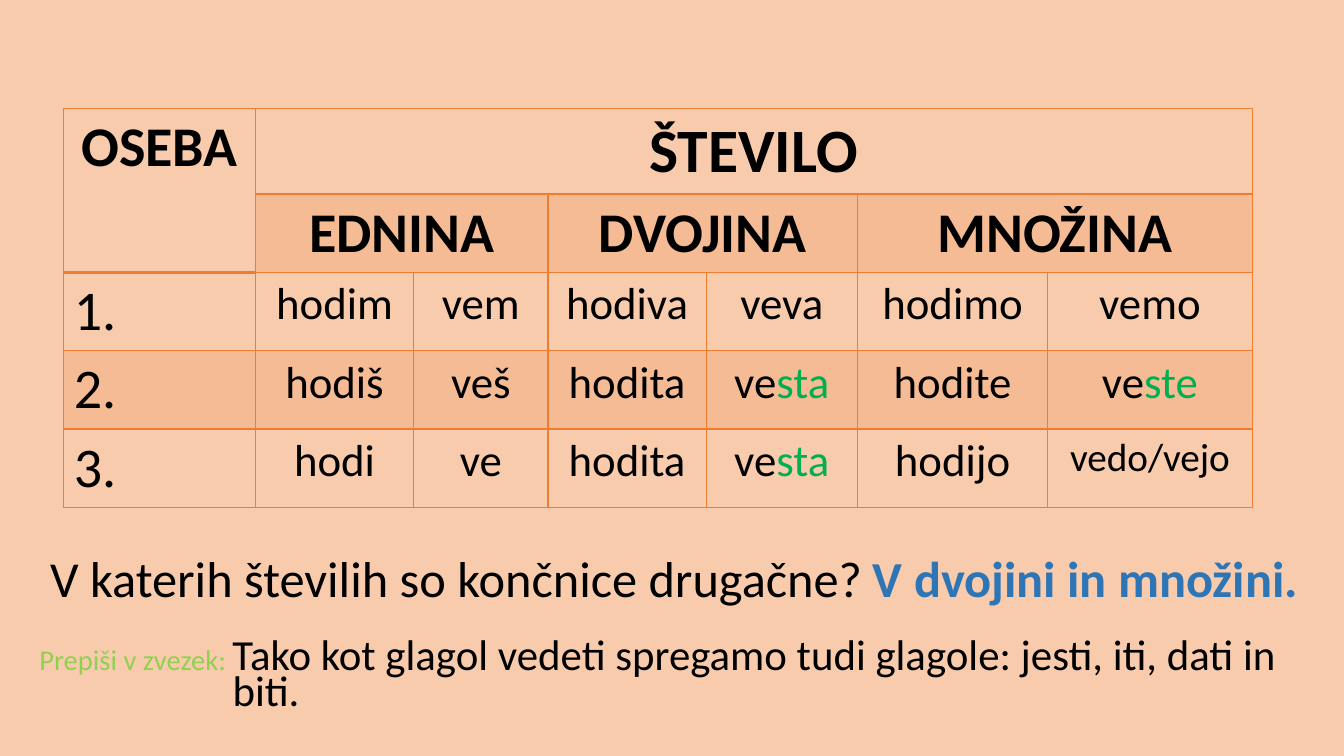
from dataclasses import dataclass

from lxml import etree
from pptx import Presentation
from pptx.dml.color import RGBColor
from pptx.enum.text import MSO_ANCHOR, PP_ALIGN
from pptx.oxml.ns import qn
from pptx.util import Pt

CENTER, LEFT = PP_ALIGN.CENTER, PP_ALIGN.LEFT
MIDDLE = MSO_ANCHOR.MIDDLE
FONT = "Calibri"
BLACK, GREEN, BLUE, LIME = "000000", "00B050", "2E75B6", "92D050"
PEACH, ORANGE = "F8CBAD", "ED7D31"
TINT_PERCENT = 20
COLUMN_WIDTHS = [137, 113, 96, 113, 108, 136, 146]
ROW_HEIGHTS = [61, 56, 56, 56, 56]
TINTED_ROWS = (1, 3)


@dataclass
class Run:
    text: str
    size: float
    color: str = BLACK
    bold: bool = False


@dataclass
class Line:
    runs: list[Run]
    align: PP_ALIGN = CENTER
    spacing: float = 1.0
    indent: float = 0


@dataclass
class TextBox:
    left: float
    top: float
    width: float
    height: float
    lines: list[Line]


@dataclass
class Heading:
    """A header cell with the number of rows and columns it covers."""
    row: int
    column: int
    rows: int
    columns: int
    text: str
    size: float = 40


HEADINGS = [
    Heading(0, 0, 2, 1, "OSEBA"),
    Heading(0, 1, 1, 6, "ŠTEVILO", 44),
    Heading(1, 1, 1, 2, "EDNINA"),
    Heading(1, 3, 1, 2, "DVOJINA"),
    Heading(1, 5, 1, 2, "MNOŽINA"),
]

# A bar separates the stem from its highlighted ending.
VERB_FORMS = [
    ["hodim", "vem", "hodiva", "veva", "hodimo", "vemo"],
    ["hodiš", "veš", "hodita", "ve|sta", "hodite", "ve|ste"],
    ["hodi", "ve", "hodita", "ve|sta", "hodijo", "vedo/vejo"],
]
SMALLER_FORM = "vedo/vejo"

TEXT_BOXES = [
    TextBox(21, 373.5, 610, 83.5, [
        Line([Run("V katerih številih so končnice drugačne?", 36)], spacing=0.9)]),
    TextBox(588, 385, 375, 60.5, [
        Line([Run("V dvojini in množini.", 36, BLUE, True)], spacing=0.9)]),
    TextBox(21, 453, 926, 62, [
        Line([Run("Prepiši v zvezek: ", 20.4, LIME),
              Run("Tako kot glagol vedeti spregamo tudi glagole: jesti, iti, dati in", 30.6)],
             LEFT, 0.7),
        Line([Run("biti.", 30.6)], LEFT, 0.7, indent=138)]),
]


def rgb(color: str) -> RGBColor:
    return RGBColor.from_string(color)


def write_line(paragraph, line: Line) -> None:
    paragraph.alignment = line.align
    paragraph.line_spacing = line.spacing
    if line.indent:
        properties = paragraph._p.get_or_add_pPr()
        properties.set("marL", str(Pt(line.indent)))
        properties.set("indent", "0")
    for item in line.runs:
        run = paragraph.add_run()
        run.text = item.text
        run.font.name = FONT
        run.font.size = Pt(item.size)
        run.font.bold = item.bold
        run.font.color.rgb = rgb(item.color)


def add_text_box(slide, box: TextBox) -> None:
    shape = slide.shapes.add_textbox(Pt(box.left), Pt(box.top), Pt(box.width), Pt(box.height))
    frame = shape.text_frame
    frame.word_wrap = True
    frame.vertical_anchor = MIDDLE
    for index, line in enumerate(box.lines):
        paragraph = frame.add_paragraph() if index else frame.paragraphs[0]
        write_line(paragraph, line)


def add_solid_fill(parent):
    fill = etree.SubElement(parent, qn("a:solidFill"))
    return etree.SubElement(fill, qn("a:srgbClr"), val=ORANGE)


def style_cell(cell, bottom_width: float, tinted: bool) -> None:
    properties = cell._tc.get_or_add_tcPr()
    for side in "LRTB":
        width = bottom_width if side == "B" else 1
        border = etree.SubElement(properties, qn(f"a:ln{side}"), w=str(Pt(width)))
        add_solid_fill(border)
    if tinted:
        color = add_solid_fill(properties)
        etree.SubElement(color, qn("a:alpha"), val=str(TINT_PERCENT * 1000))
    else:
        cell.fill.background()


def verb_runs(form: str) -> list[Run]:
    size = 28 if form == SMALLER_FORM else 32
    stem, _, ending = form.partition("|")
    runs = [Run(stem, size)]
    if ending:
        runs.append(Run(ending, size, GREEN))
    return runs


def add_verb_table(slide) -> None:
    table = slide.shapes.add_table(
        len(ROW_HEIGHTS), len(COLUMN_WIDTHS), Pt(45.5), Pt(77.5),
        Pt(sum(COLUMN_WIDTHS)), Pt(sum(ROW_HEIGHTS))).table
    table.first_row = False
    table.horz_banding = False
    for column, width in zip(table.columns, COLUMN_WIDTHS):
        column.width = Pt(width)
    for row, height in zip(table.rows, ROW_HEIGHTS):
        row.height = Pt(height)

    for row in range(len(ROW_HEIGHTS)):
        for column in range(len(COLUMN_WIDTHS)):
            is_person_heading = column == 0 and row < 2
            bottom_width = 2 if row == 0 or is_person_heading else 1
            tinted = row in TINTED_ROWS and not is_person_heading
            style_cell(table.cell(row, column), bottom_width, tinted)

    for heading in HEADINGS:
        cell = table.cell(heading.row, heading.column)
        cell.merge(table.cell(heading.row + heading.rows - 1,
                              heading.column + heading.columns - 1))
        write_line(cell.text_frame.paragraphs[0],
                   Line([Run(heading.text, heading.size, bold=True)]))

    for person, forms in enumerate(VERB_FORMS, start=1):
        lines = [Line([Run(f"{person}.", 40)], LEFT)]
        lines += [Line(verb_runs(form)) for form in forms]
        for column, line in enumerate(lines):
            write_line(table.cell(person + 1, column).text_frame.paragraphs[0], line)


def main() -> None:
    presentation = Presentation()
    presentation.slide_width, presentation.slide_height = Pt(960), Pt(540)
    slide = presentation.slides.add_slide(presentation.slide_layouts[6])
    slide.background.fill.solid()
    slide.background.fill.fore_color.rgb = rgb(PEACH)
    add_verb_table(slide)
    for box in TEXT_BOXES:
        add_text_box(slide, box)
    presentation.save("out.pptx")


if __name__ == "__main__":
    main()
